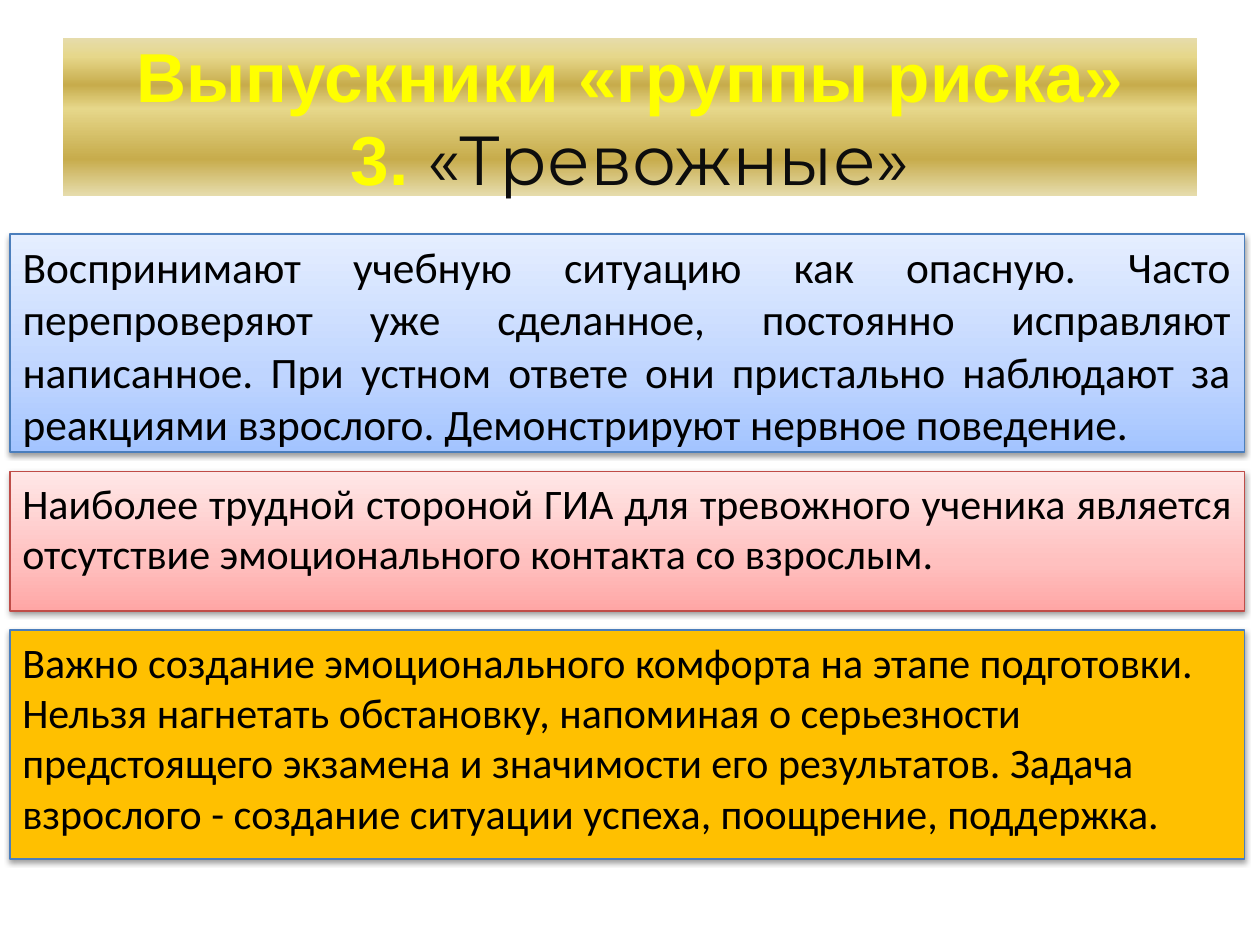
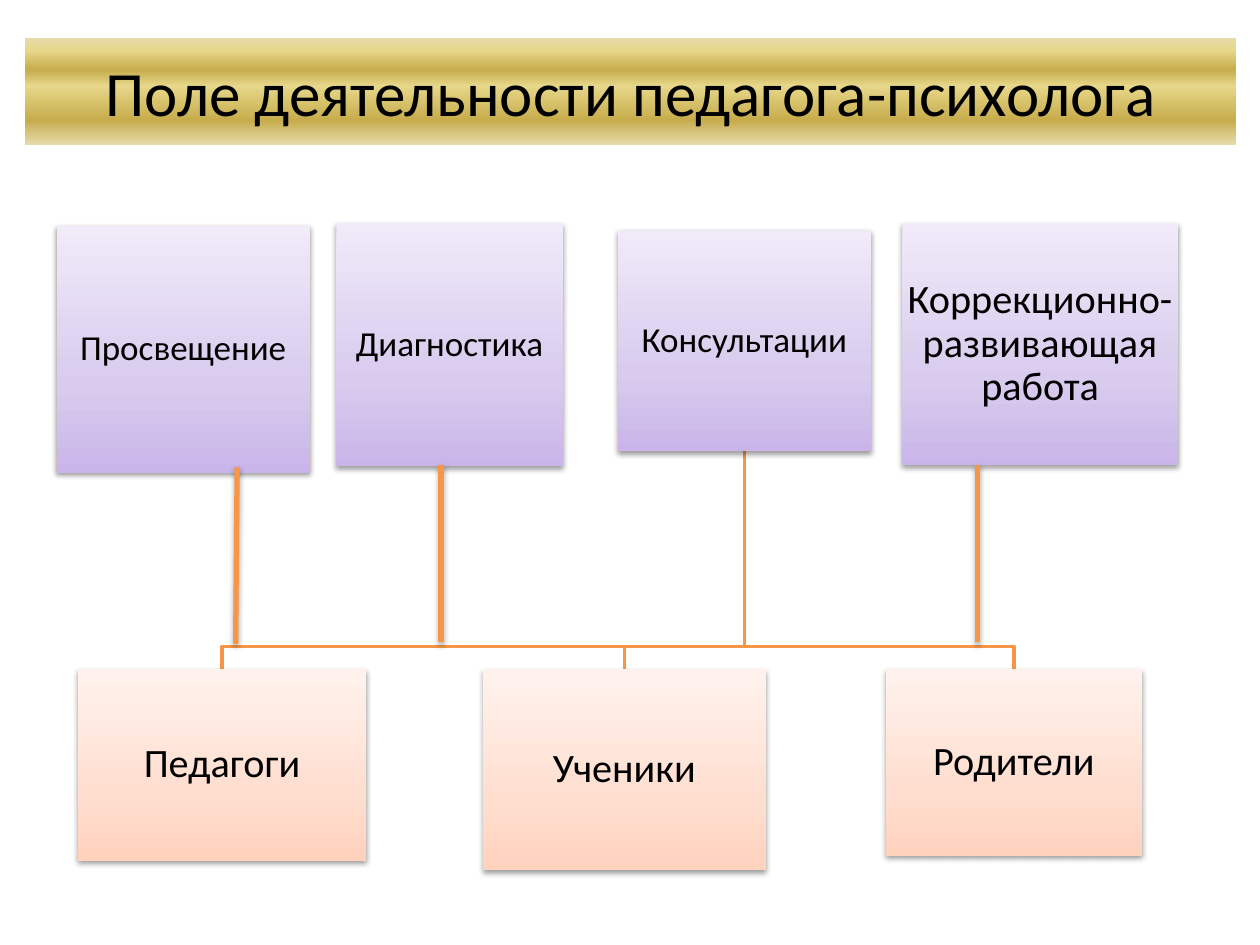
from pptx import Presentation
from pptx.dml.color import RGBColor
from pptx.enum.shapes import MSO_CONNECTOR, MSO_SHAPE
from pptx.enum.text import MSO_ANCHOR as Anchor, MSO_AUTO_SIZE as AutoSize, PP_ALIGN as Align
from pptx.oxml import parse_xml
from pptx.oxml.ns import nsdecls, qn
from pptx.util import Cm, Pt

# Colours
BLACK = RGBColor(0x00, 0x00, 0x00)
NEAR_BLACK = RGBColor(0x0D, 0x0D, 0x0D)
YELLOW = RGBColor(0xFF, 0xFF, 0x00)
AMBER = RGBColor(0xFF, 0xC0, 0x00)
ORANGE = RGBColor(0xF7, 0x96, 0x46)
BLUE_EDGE = RGBColor(0x4B, 0x7E, 0xBC)
RED_EDGE = RGBColor(0xBF, 0x4C, 0x48)
PALE_GOLD = RGBColor(0xE6, 0xDC, 0xAC)
LIGHT_GOLD = RGBColor(0xE6, 0xD7, 0x8A)
DARK_GOLD = RGBColor(0xC7, 0xAC, 0x4C)

# Fills as (percent, colour) stops from top to bottom
GOLD_BAND = [(0, PALE_GOLD), (12, LIGHT_GOLD), (30, DARK_GOLD),
             (45, LIGHT_GOLD), (77, DARK_GOLD), (100, PALE_GOLD)]
BLUE = [(0, RGBColor(0xE5, 0xEE, 0xFF)), (65, RGBColor(0xBF, 0xD5, 0xFF)),
        (100, RGBColor(0xA3, 0xC4, 0xFF))]
PINK = [(0, RGBColor(0xFF, 0xE7, 0xE7)), (65, RGBColor(0xFF, 0xC0, 0xBF)),
        (100, RGBColor(0xFF, 0xA6, 0xA5))]
LILAC = [(0, RGBColor(0xF0, 0xEA, 0xF9)), (65, RGBColor(0xD8, 0xCB, 0xEE)),
         (100, RGBColor(0xC9, 0xB5, 0xE8))]
PEACH = [(0, RGBColor(0xFF, 0xF2, 0xED)), (65, RGBColor(0xFF, 0xDE, 0xD0)),
         (100, RGBColor(0xFF, 0xD2, 0xBD))]
SOLID_AMBER = [(0, AMBER)]

SHADOW = (f'<a:effectLst {nsdecls("a")}><a:outerShdw blurRad="40000" dist="20000" dir="5400000" '
          'rotWithShape="0"><a:srgbClr val="000000"><a:alpha val="{}000"/></a:srgbClr>'
          '</a:outerShdw></a:effectLst>')


def dress(box, place, stops, edge=None, shadow=True):
    """Place a box and give it its fill, edge, shadow and text frame settings."""
    for side, length in zip(("left", "top", "width", "height"), place):
        setattr(box, side, Cm(length))
    box.fill.solid()
    box.fill.fore_color.rgb = stops[0][1]
    properties = box._element.spPr
    if len(stops) > 1:
        marks = "".join(f'<a:gs pos="{percent * 1000}"><a:srgbClr val="{colour}"/></a:gs>'
                        for percent, colour in stops)
        gradient = parse_xml(f'<a:gradFill {nsdecls("a")} rotWithShape="1"><a:gsLst>{marks}</a:gsLst>'
                             '<a:lin ang="5400000" scaled="0"/></a:gradFill>')
        properties.replace(properties.find(qn("a:solidFill")), gradient)
    if edge is None:
        box.line.fill.background()
    else:
        box.line.color.rgb = edge
        box.line.width = Pt(0.75)
    if shadow:
        properties.append(parse_xml(SHADOW.format(38)))
    box.text_frame.word_wrap = True
    box.text_frame.auto_size = AutoSize.NONE


def write(paragraph, text, size, align, font="Calibri", colour=BLACK, bold=False):
    """Add a formatted run to a paragraph."""
    paragraph.alignment = align
    paragraph.space_before = Pt(0)
    run = paragraph.add_run()
    run.text = text
    for attribute, value in {"size": Pt(size), "name": font, "bold": bold}.items():
        setattr(run.font, attribute, value)
    run.font.color.rgb = colour


deck = Presentation()
deck.slide_width, deck.slide_height = Cm(25.4), Cm(19.05)

# Slide 1: anxious pupils
anxious = deck.slides.add_slide(deck.slide_layouts[1])
heading = anxious.shapes.title
dress(heading, (1.27, 0.76, 22.86, 3.18), GOLD_BAND, shadow=False)
heading_line = heading.text_frame.paragraphs[0]
risk_group = {"size": 39.6, "align": Align.CENTER, "font": "Arial", "colour": YELLOW, "bold": True}
write(heading_line, "Выпускники «группы риска»", **risk_group)
heading_line.add_line_break()
write(heading_line, "3. ", **risk_group)
write(heading_line, "«Тревожные»", 39.6, Align.CENTER, "Montserrat", NEAR_BLACK)

# Three full-width panels: behaviour, difficulty, advice
panels = [
    (4.72, 4.39, BLUE, BLUE_EDGE, 24.8, Align.JUSTIFY,
     "Воспринимают учебную ситуацию как опасную. Часто перепроверяют уже сделанное, постоянно "
     "исправляют написанное. При устном ответе они пристально наблюдают за реакциями взрослого. "
     "Демонстрируют нервное поведение."),
    (9.5, 2.82, PINK, RED_EDGE, 24, Align.JUSTIFY,
     "Наиболее трудной стороной ГИА для тревожного ученика является отсутствие эмоционального "
     "контакта со взрослым."),
    (12.7, 4.62, SOLID_AMBER, BLUE_EDGE, 24, Align.LEFT,
     "Важно создание эмоционального комфорта на этапе подготовки. Нельзя нагнетать обстановку, "
     "напоминая о серьезности предстоящего экзамена и значимости его результатов. Задача "
     "взрослого - создание ситуации успеха, поощрение, поддержка."),
]
for index, (top, height, stops, edge, size, align, text) in enumerate(panels):
    if index == 0:
        panel = anxious.placeholders[1]
    else:
        panel = anxious.shapes.add_shape(MSO_SHAPE.RECTANGLE, 0, 0, 0, 0)
    dress(panel, (0.2, top, 24.89, height), stops, edge)
    panel.text_frame.vertical_anchor = Anchor.TOP
    panel_text = panel.text_frame.paragraphs[0]
    layout = panel_text._p.get_or_add_pPr()
    layout.set("marL", "0")
    layout.set("indent", "0")
    layout.append(parse_xml(f'<a:buNone {nsdecls("a")}/>'))
    write(panel_text, text, size, align)

# Slide 2: the psychologist's field of work
field = deck.slides.add_slide(deck.slide_layouts[5])
heading = field.shapes.title
dress(heading, (0.51, 0.76, 24.41, 2.16), GOLD_BAND, shadow=False)
write(heading.text_frame.paragraphs[0], "Поле деятельности педагога-психолога", 36, Align.CENTER)

AUDIENCE_TOP = 13.49
activities = [
    ("Просвещение", 20, (1.14, 4.55, 5.11, 4.98)),
    ("Диагностика", 20, (6.78, 4.5, 4.57, 4.9)),
    ("Консультации", 20, (12.45, 4.65, 5.11, 4.45)),
    ("Коррекционно-развивающая работа", 23, (18.19, 4.5, 5.56, 4.88)),
]
audiences = [
    ("Педагоги", 23, (1.57, AUDIENCE_TOP, 5.82, 3.86)),
    ("Ученики", 23, (9.73, AUDIENCE_TOP, 5.72, 4.06)),
    ("Родители", 23, (17.86, AUDIENCE_TOP, 5.16, 3.76)),
]

# Branches from the consultations to the middle of each audience
ROOT_X, ROOT_Y, BUS_Y = 15.01, 9.1, 13.03
for _, _, (left, top, width, _) in audiences:
    middle = left + width / 2
    outline = field.shapes.build_freeform(Cm(ROOT_X), Cm(ROOT_Y))
    bends = [(ROOT_X, BUS_Y), (middle, BUS_Y), (middle, top)]
    outline.add_line_segments([(Cm(x), Cm(y)) for x, y in bends], close=False)
    branch = outline.convert_to_shape()
    branch.fill.background()
    branch.line.color.rgb = ORANGE
    branch.line.width = Pt(2)
    branch.shadow.inherit = False

# Activity and audience tiles
for tiles, stops in ((activities, LILAC), (audiences, PEACH)):
    for label, size, place in tiles:
        tile = field.shapes.add_shape(MSO_SHAPE.RECTANGLE, 0, 0, 0, 0)
        dress(tile, place, stops)
        frame = tile.text_frame
        frame.vertical_anchor = Anchor.MIDDLE
        for side in ("left", "top", "right", "bottom"):
            setattr(frame, f"margin_{side}", Cm(0.04))
        frame.paragraphs[0].line_spacing = 0.9
        write(frame.paragraphs[0], label, size, Align.CENTER)

# Thick links from the other activities
for start_x, start_y, end_x, end_y in ((4.78, 9.42, 4.75, 12.98),
                                       (8.89, 9.37, 8.89, 12.95),
                                       (19.71, 9.37, 19.71, 12.95)):
    link = field.shapes.add_connector(MSO_CONNECTOR.STRAIGHT, Cm(start_x), Cm(start_y),
                                      Cm(end_x), Cm(end_y))
    link.line.color.rgb = ORANGE
    link.line.width = Pt(3)
    link._element.spPr.append(parse_xml(SHADOW.format(35)))

deck.save("out.pptx")
